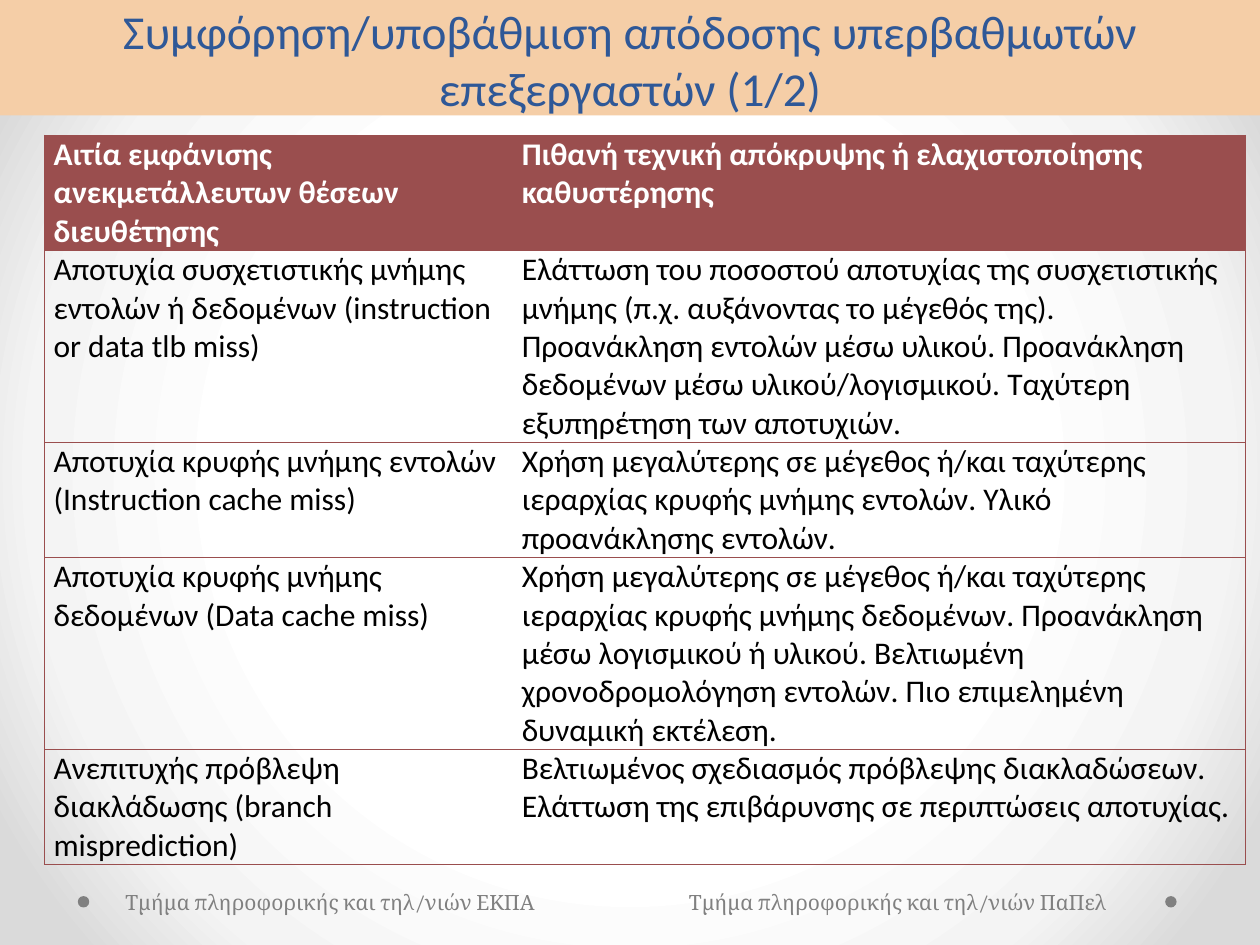
from lxml import etree
from pptx import Presentation
from pptx.dml.color import RGBColor
from pptx.enum.shapes import MSO_SHAPE as SHAPE
from pptx.enum.text import MSO_ANCHOR as ANCHOR, PP_ALIGN as ALIGN
from pptx.oxml import parse_xml
from pptx.oxml.ns import nsdecls, qn
from pptx.util import Cm, Pt

PEACH = RGBColor(0xF5, 0xCE, 0xA7)
BLUE = RGBColor(0x2F, 0x58, 0x97)
MAROON = RGBColor(0x9A, 0x4E, 0x4E)
GREY = RGBColor(0x80, 0x80, 0x80)
WHITE = RGBColor(0xFF, 0xFF, 0xFF)
BLACK = RGBColor(0, 0, 0)
MIST = RGBColor(0xF4, 0xF4, 0xF4)
SILVER = RGBColor(0xDA, 0xDA, 0xDA)

TITLE = "Συμφόρηση/υποβάθμιση απόδοσης υπερβαθμωτών επεξεργαστών (1/2)"
ROWS = [
    ("Αιτία εμφάνισης ανεκμετάλλευτων θέσεων διευθέτησης",
     "Πιθανή τεχνική απόκρυψης ή ελαχιστοποίησης καθυστέρησης"),
    ("Αποτυχία συσχετιστικής μνήμης εντολών ή δεδομένων (instruction or data tlb miss)",
     "Ελάττωση του ποσοστού αποτυχίας της συσχετιστικής μνήμης (π.χ. αυξάνοντας το "
     "μέγεθός της). Προανάκληση εντολών μέσω υλικού. Προανάκληση δεδομένων μέσω "
     "υλικού/λογισμικού. Ταχύτερη εξυπηρέτηση των αποτυχιών."),
    ("Αποτυχία κρυφής μνήμης εντολών (Instruction cache miss)",
     "Χρήση μεγαλύτερης σε μέγεθος ή/και ταχύτερης ιεραρχίας κρυφής μνήμης εντολών. "
     "Υλικό προανάκλησης εντολών."),
    ("Αποτυχία κρυφής μνήμης δεδομένων (Data cache miss)",
     "Χρήση μεγαλύτερης σε μέγεθος ή/και ταχύτερης ιεραρχίας κρυφής μνήμης δεδομένων. "
     "Προανάκληση μέσω λογισμικού ή υλικού. Βελτιωμένη χρονοδρομολόγηση εντολών. "
     "Πιο επιμελημένη δυναμική εκτέλεση."),
    ("Ανεπιτυχής πρόβλεψη διακλάδωσης (branch misprediction)",
     "Βελτιωμένος σχεδιασμός πρόβλεψης διακλαδώσεων. Ελάττωση της επιβάρυνσης σε "
     "περιπτώσεις αποτυχίας."),
]
ROW_LINES = (3, 5, 3, 5, 3)
COL_SHARES = (0.39, 0.61)
DEPARTMENTS = ("Τμήμα πληροφορικής και τηλ/νιών ΕΚΠΑ",
               "Τμήμα πληροφορικής και τηλ/νιών ΠαΠελ")


def write(tf, text, color, margins=None, **font):
    for name, value in (margins or {}).items():
        setattr(tf, f"margin_{name}", value)
    tf.word_wrap = True
    p = tf.paragraphs[0]
    r = p.add_run()
    r.text = text
    for name, value in font.items():
        setattr(r.font, name, value)
    r.font.color.rgb = color
    return p


def add_plain_shape(s, kind, box, color):
    sp = s.shapes.add_shape(kind, *box)
    sp.shadow.inherit = False
    sp.fill.solid()
    sp.fill.fore_color.rgb = color
    sp.line.fill.background()
    return sp


def paint_background(s):
    """Radial gradient, white in the middle."""
    s.background.fill.gradient()
    old = s.element.find(".//" + qn("a:gradFill"))
    stops = "".join(f'<a:gs pos="{pos}000"><a:srgbClr val="{color}"/></a:gs>'
                    for pos, color in ((50, WHITE), (76, MIST), (92, SILVER)))
    old.getparent().replace(old, parse_xml(
        f'<a:gradFill {nsdecls("a")} rotWithShape="1"><a:gsLst>{stops}</a:gsLst>'
        '<a:path path="circle"><a:fillToRect l="50000" t="50000" r="50000" b="50000"/>'
        '</a:path></a:gradFill>'))


def add_title(s, box):
    sp = add_plain_shape(s, SHAPE.RECTANGLE, box, PEACH)
    tf = sp.text_frame
    tf.vertical_anchor = ANCHOR.BOTTOM
    p = write(tf, TITLE, BLUE, {"top": 0, "bottom": 0}, name="Calibri", size=Pt(27))
    p.alignment = ALIGN.CENTER


def set_borders(cell, color, sides):
    """Draw the given sides (of L, R, T, B) and clear the others."""
    tc_pr = cell._tc.get_or_add_tcPr()
    for side in "LRTB":
        ln = etree.SubElement(tc_pr, qn(f"a:ln{side}"), w=str(Pt(0.75)))
        if side in sides:
            fill = etree.SubElement(ln, qn("a:solidFill"))
            etree.SubElement(fill, qn("a:srgbClr"), val=str(color))
        else:
            etree.SubElement(ln, qn("a:noFill"))


def add_causes_table(s, box):
    width, height = box[2:]
    table = s.shapes.add_table(len(ROWS), len(COL_SHARES), *box).table
    table.horz_banding = False
    for col, share in zip(table.columns, COL_SHARES):
        col.width = int(width * share)
    margins = {"left": Cm(0.18), "right": Cm(0.18), "top": 0, "bottom": 0}
    for i, (texts, lines) in enumerate(zip(ROWS, ROW_LINES)):
        table.rows[i].height = int(height * lines / sum(ROW_LINES))
        header = i == 0
        for j, text in enumerate(texts):
            cell = table.cell(i, j)
            set_borders(cell, MAROON, "TB" + "LR"[j])
            if header:
                cell.fill.solid()
                cell.fill.fore_color.rgb = MAROON
            else:
                cell.fill.background()
            for name, value in margins.items():
                setattr(cell, f"margin_{name}", value)
            write(cell.text_frame, text, WHITE if header else BLACK,
                  name="Calibri", size=Pt(18), bold=header)


def add_footer(s, box):
    """Two department names between a dot at each end of the box."""
    left, top, width, height = box
    dot = Cm(0.23)
    for x in (left, left + width - dot):
        add_plain_shape(s, SHAPE.OVAL, (x, top + (height - dot) // 2, dot, dot), GREY)
    spans = ((Cm(0.71), Cm(10)), (Cm(12.07), Cm(9.1)))
    for text, (dx, w) in zip(DEPARTMENTS, spans):
        tb = s.shapes.add_textbox(left + dx, top, w, height)
        write(tb.text_frame, text, GREY, name="Cambria", size=Pt(12))


def main():
    prs = Presentation()
    prs.slide_width, prs.slide_height = Cm(25.4), Cm(19.05)
    s = prs.slides.add_slide(prs.slide_layouts[6])
    paint_background(s)
    add_footer(s, (Cm(1.57), Cm(17.8), Cm(22.15), Cm(0.76)))
    add_title(s, (0, 0, prs.slide_width, Cm(2.33)))
    add_causes_table(s, (Cm(0.9), Cm(2.73), Cm(24.2), Cm(14.7)))
    prs.save("out.pptx")


if __name__ == "__main__":
    main()
